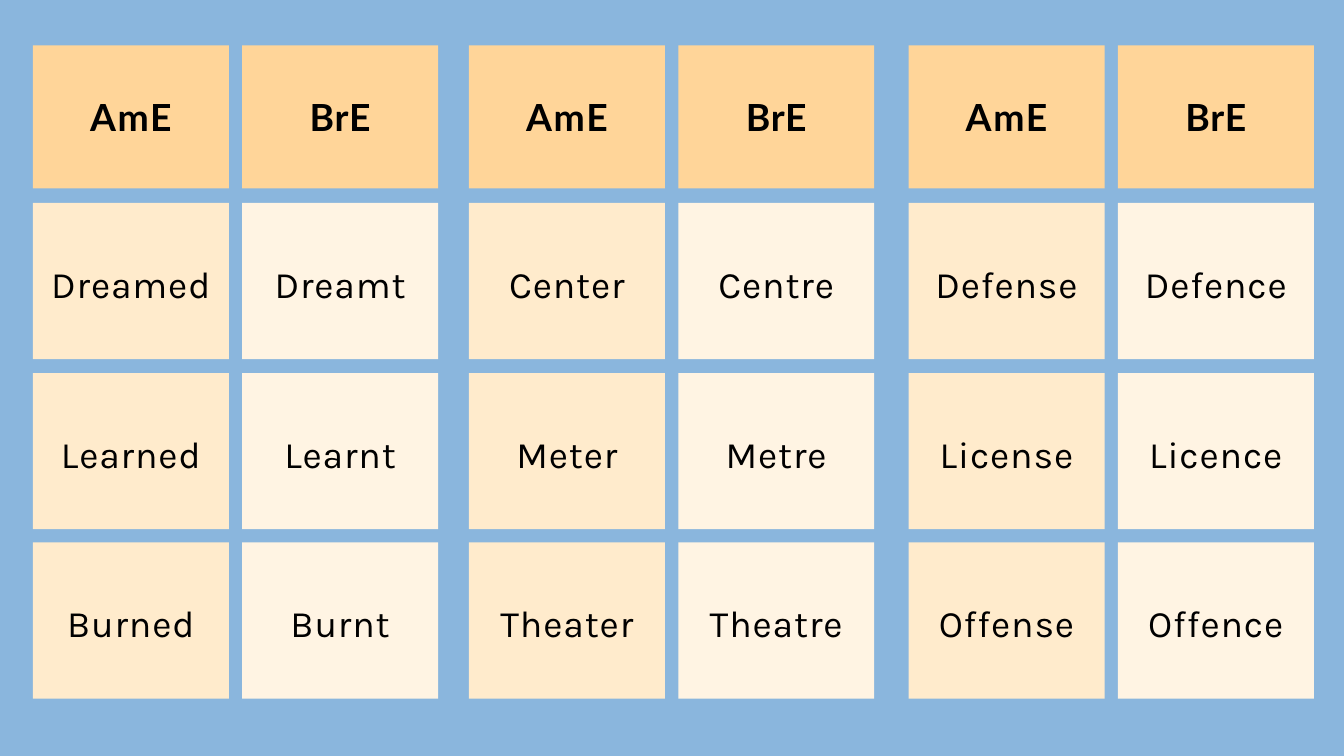
from pptx import Presentation
from pptx.dml.color import RGBColor
from pptx.enum.shapes import MSO_SHAPE
from pptx.enum.text import MSO_ANCHOR, PP_ALIGN
from pptx.util import Pt

PX = 9525  # EMU per px, 96 px to the inch

# Grid
GROUP_LEFTS = (47, 670, 1298)
COLUMN_PITCH, CELL_W = 299, 280
HEADER_TOP, HEADER_H = 65, 204
ROW_TOPS, ROW_H = (290, 533, 775), 223

# Colours
BLUE, ORANGE = "8AB6DD", "FFD599"
COLUMN_FILLS = ("FFEBCC", "FFF4E3")

# Heading and letter spacing of each column
HEADERS = (("AmE", 1.9), ("BrE", 0.9))
GROUPS = (
    (("Dreamed", "Dreamt"), ("Learned", "Learnt"), ("Burned", "Burnt")),
    (("Center", "Centre"), ("Meter", "Metre"), ("Theater", "Theatre")),
    (("Defense", "Defence"), ("License", "Licence"), ("Offense", "Offence")),
)


def px(n):
    return n * PX


def rgb(color):
    return RGBColor.from_string(color)


def add_text(sp, text, font="Karla", size=40, color="000000", bold=False,
             spacing=1, inset_top=0):
    tf = sp.text_frame
    tf.word_wrap = True
    tf.vertical_anchor = MSO_ANCHOR.MIDDLE
    tf.margin_left = tf.margin_right = tf.margin_bottom = 0
    tf.margin_top = px(inset_top)
    p = tf.paragraphs[0]
    p.alignment = PP_ALIGN.CENTER
    r = p.add_run()
    r.text = text
    r.font.name, r.font.size, r.font.bold = font, Pt(size), bold
    r.font.color.rgb = rgb(color)
    r._r.get_or_add_rPr().set("spc", str(round(spacing * 100)))


def add_cell(s, left, top, height, fill, text, **text_format):
    sp = s.shapes.add_shape(MSO_SHAPE.RECTANGLE, px(left), px(top),
                            px(CELL_W), px(height))
    sp.shadow.inherit = False
    sp.fill.solid()
    sp.fill.fore_color.rgb = rgb(fill)
    sp.line.fill.background()
    add_text(sp, text, **text_format)


def add_group(s, left, rows):
    lefts = (left, left + COLUMN_PITCH)
    # Heading cells
    for x, (label, spacing) in zip(lefts, HEADERS):
        add_cell(s, x, HEADER_TOP, HEADER_H, ORANGE, label,
                 font="Lato", bold=True, spacing=spacing)
    # Word pairs
    for top, words in zip(ROW_TOPS, rows):
        for x, fill, word in zip(lefts, COLUMN_FILLS, words):
            add_cell(s, x, top, ROW_H, fill, word, inset_top=6)


def main():
    prs = Presentation()
    prs.slide_width, prs.slide_height = px(1920), px(1080)
    s = prs.slides.add_slide(prs.slide_layouts[6])
    s.background.fill.solid()
    s.background.fill.fore_color.rgb = rgb(BLUE)
    for left, rows in zip(GROUP_LEFTS, GROUPS):
        add_group(s, left, rows)
    prs.save("out.pptx")


if __name__ == "__main__":
    main()
